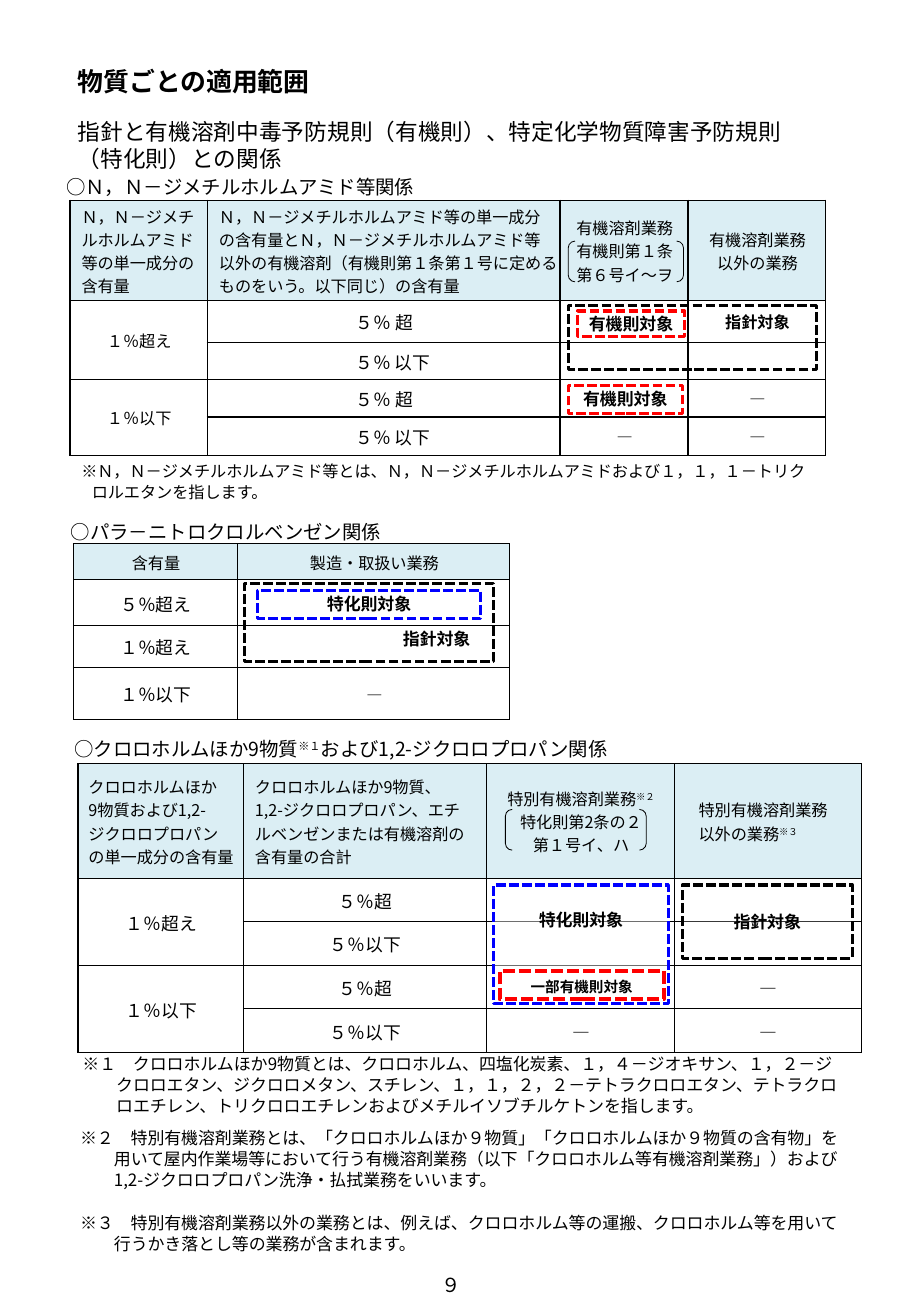
from dataclasses import dataclass

from lxml.etree import SubElement
from pptx import Presentation
from pptx.dml.color import RGBColor
from pptx.enum.dml import MSO_LINE_DASH_STYLE as Dash
from pptx.enum.shapes import MSO_SHAPE as Preset
from pptx.enum.text import MSO_ANCHOR as Anchor, PP_ALIGN as Align
from pptx.oxml.ns import qn
from pptx.util import Inches, Pt


@dataclass(frozen=True)
class Theme:
    black: str = "000000"
    white: str = "FFFFFF"
    header: str = "DBEEF4"
    red: str = "FF0000"
    blue: str = "0000FF"
    font: str = "Noto Sans CJK JP"
    label_font: str = "Calibri"
    number_font: str = "Arial"
    title: float = 16
    subtitle: float = 14
    heading: float = 12
    note: float = 10.5
    label: float = 10.5
    small_label: float = 9
    body: float = 11
    small: float = 10


theme = Theme()


def write(frame, text, size=theme.small, font=theme.font, bold=False, align=Align.LEFT,
          anchor=Anchor.TOP, spacing=None, before=0, left=0, first=0):
    """Each line is a paragraph, \v breaks a line, ^ encloses a superscript."""
    frame.vertical_anchor = anchor
    for number, line in enumerate(text.split("\n")):
        paragraph = frame.add_paragraph() if number else frame.paragraphs[0]
        paragraph.alignment = align
        if spacing:
            paragraph.line_spacing = Pt(spacing)
        if number:
            paragraph.space_before = Pt(before)
        properties = paragraph._p.get_or_add_pPr()
        properties.set("marL", str(Inches(left)))
        properties.set("indent", str(Inches(first)))
        if not line:
            paragraph._p.get_or_add_endParaRPr().set("sz", str(int(size * 100)))
            continue
        for row, segment in enumerate(line.split("\v")):
            if row:
                paragraph.add_line_break()
            for part, words in enumerate(segment.split("^")):
                if not words:
                    continue
                run = paragraph.add_run()
                run.text = words
                run.font.size = Pt(size)
                run.font.name = font
                run.font.bold = bold
                run.font.color.rgb = RGBColor.from_string(theme.black)
                SubElement(run.font._element, qn("a:ea"), typeface=theme.font)
                if part % 2:
                    run.font._element.set("baseline", "30000")


def set_borders(cell, width):
    properties = cell._tc.get_or_add_tcPr()
    for position, side in enumerate(("a:lnL", "a:lnR", "a:lnT", "a:lnB")):
        line = SubElement(properties, qn(side), w=str(Pt(width)))
        fill = SubElement(line, qn("a:solidFill"))
        SubElement(fill, qn("a:srgbClr"), val=theme.black)
        properties.remove(line)
        properties.insert(position, line)


presentation = Presentation()
presentation.slide_width = Inches(63 / 8)
presentation.slide_height = Inches(11.3)
slide = presentation.slides.add_slide(presentation.slide_layouts[6])

# Titles, section headings, notes and page number
heading = dict(size=theme.heading, spacing=14.2)
note = dict(size=theme.note, spacing=13, before=13, left=0.29, first=-0.29)
texts = [
    ((0.57, 0.52, 2.73, 0.37), True, "物質ごとの適用範囲",
     dict(size=theme.title, bold=True, spacing=19)),
    ((0.48, 0.96, 6.89, 0.59), True,
     "指針と有機溶剤中毒予防規則（有機則）、特定化学物質障害予防規則\n（特化則）との関係",
     dict(size=theme.subtitle, spacing=16.8, left=0.09)),
    ((0.47, 1.46, 3.23, 0.31), False, "○Ｎ，Ｎ－ジメチルホルムアミド等関係", heading),
    ((0.51, 4.42, 2.89, 0.3), False, "○パラ－ニトロクロルベンゼン関係", heading),
    ((0.54, 6.28, 6.01, 0.3), True,
     "○クロロホルムほか9物質^※１^および1,2-ジクロロプロパン関係", heading),
    ((0.6, 3.9, 6.53, 0.44), True,
     "※Ｎ，Ｎ－ジメチルホルムアミド等とは、Ｎ，Ｎ－ジメチルホルムアミドおよび"
     "１，１，１－トリクロルエタンを指します。",
     dict(spacing=13, left=0.09, first=-0.09)),
    ((0.61, 8.99, 7.04, 0.65), True,
     "※１　クロロホルムほか9物質とは、クロロホルム、四塩化炭素、１，４－ジオキサン、１，２－ジ\v"
     "クロロエタン、ジクロロメタン、スチレン、１，１，２，２－テトラクロロエタン、テトラクロ\v"
     "ロエチレン、トリクロロエチレンおよびメチルイソブチルケトンを指します。", note),
    ((0.59, 9.63, 6.9, 1.19), True,
     "※２　特別有機溶剤業務とは、「クロロホルムほか９物質」「クロロホルムほか９物質の含有物」を\v"
     "用いて屋内作業場等において行う有機溶剤業務（以下「クロロホルム等有機溶剤業務」）および\v"
     "1,2-ジクロロプロパン洗浄・払拭業務をいいます。\n"
     "※３　特別有機溶剤業務以外の業務とは、例えば、クロロホルム等の運搬、クロロホルム等を用いて\v"
     "行うかき落とし等の業務が含まれます。", note),
    ((3.69, 10.88, 0.33, 0.32), False, "９", dict(size=theme.heading, font=theme.number_font)),
]
for place, wrap, text, style in texts:
    box = slide.shapes.add_textbox(*map(Inches, place))
    box.text_frame.word_wrap = wrap
    write(box.text_frame, text, **style)

# Tables: None continues the cell above; header indents above zero align left
tables = [
    dict(at=(0.6, 1.72), columns=(1.18, 3.03, 1.1, 1.18), heights=(0.86, 0.36, 0.32, 0.32, 0.33),
         border=1, label=theme.small, dash=theme.small, indents=(0.09, 0.09, 0, 0), lower_shift=0.15,
         rows=[("Ｎ，Ｎ－ジメチルホルムアミド等の単一成分の含有量",
                "Ｎ，Ｎ－ジメチルホルムアミド等の単一成分\nの含有量とＮ，Ｎ－ジメチルホルムアミド等\n"
                "以外の有機溶剤（有機則第１条第１号に定めるものをいう。以下同じ）の含有量",
                "有機溶剤業務\n有機則第１条\n第６号イ～ヲ", "有機溶剤業務\n以外の業務"),
               ("１％超え", "５％ 超", "", "指針対象"),
               (None, "５％ 以下", "", ""),
               ("１％以下", "５％ 超", "", "―"),
               (None, "５％ 以下", "―", "―")]),
    dict(at=(0.63, 4.67), columns=(1.41, 2.34), heights=(0.31, 0.39, 0.36, 0.45),
         border=0.75, label=theme.body, dash=theme.small, indents=(0, 0), lower_shift=0,
         rows=[("含有量", "製造・取扱い業務"), ("５％超え", ""), ("１％超え", ""), ("１％以下", "―")]),
    dict(at=(0.67, 6.56), columns=(1.42, 2.09, 1.61, 1.61), heights=(0.98,) + (0.37, 0.38) * 2,
         border=0.75, label=theme.body, dash=theme.body, indents=(0.08, 0.09, 0, 0.2), lower_shift=0,
         rows=[("クロロホルムほか\n9物質および1,2-\nジクロロプロパン\nの単一成分の含有量",
                "クロロホルムほか9物質、\n1,2-ジクロロプロパン、エチ\nルベンゼンまたは有機溶剤の\n含有量の合計",
                "特別有機溶剤業務^※２^\n特化則第2条の２\n第１号イ、ハ",
                "特別有機溶剤業務\n以外の業務^※３^"),
               ("１％超え", "５％超", "", ""),
               (None, "５％以下", "", ""),
               ("１％以下", "５％超", "", "―"),
               (None, "５％以下", "―", "―")]),
]
for data in tables:
    columns, heights = data["columns"], data["heights"]
    size = (sum(columns), sum(heights))
    table = slide.shapes.add_table(len(heights), len(columns),
                                   *map(Inches, data["at"] + size)).table
    table.first_row = table.horz_banding = False
    for column, width in zip(table.columns, columns):
        column.width = Inches(width)
    for r, (height, texts_in_row) in enumerate(zip(heights, data["rows"])):
        table.rows[r].height = Inches(height)
        for c, text in enumerate(texts_in_row):
            cell = table.cell(r, c)
            cell.margin_left = cell.margin_top = Inches(0.01)
            cell.margin_right = cell.margin_bottom = 0
            cell.fill.solid()
            cell.fill.fore_color.rgb = RGBColor.from_string(theme.white if r else theme.header)
            set_borders(cell, data["border"])
            if text is None:
                write(cell.text_frame, "")
                table.cell(r - 1, c).merge(cell)
                continue
            indent = 0 if r else data["indents"][c]
            if c == 1 and text.endswith("以下"):
                indent = data["lower_shift"]
            text_size = theme.small
            if r and "％" in text:
                text_size = theme.body if c else data["label"]
            elif text == "―":
                text_size = data["dash"]
            write(cell.text_frame, text, size=text_size, bold=text == "指針対象", left=indent,
                  align=Align.CENTER if r or not indent else Align.LEFT)
            cell.vertical_anchor = Anchor.MIDDLE

# Dashed scope frames: place, colour, line width, opacity, text, insets, text format
middle = dict(anchor=Anchor.MIDDLE, spacing=12)
tight, wide = (0.04,) * 4, (0.1, 0.05, 0.1, 0.05)
frames = [
    ((4.88, 3.31, 0.98, 0.24), theme.red, 2, 0, "有機則対象", tight, middle),
    ((4.88, 2.62, 2.13, 0.55), theme.black, 2, 0, "", tight, middle),
    ((4.96, 2.67, 0.92, 0.22), theme.red, 2, 0, "有機則対象", tight, middle),
    ((2.1, 5.01, 2.14, 0.67), theme.black, 2, 0, "指針対象", (0.1, 0.05, 0.2, 0.11),
     dict(anchor=Anchor.BOTTOM, align=Align.RIGHT, spacing=12)),
    ((2.21, 5.07, 1.92, 0.24), theme.blue, 2, 0, "特化則対象", wide, middle),
    ((4.24, 7.6, 1.5, 1.02), theme.blue, 2, 43, "特化則対象", (0.1, 0.22, 0.1, 0.05),
     dict(spacing=12)),
    ((5.86, 7.6, 1.46, 0.63), theme.black, 2, 22, "指針対象", wide, dict(anchor=Anchor.MIDDLE)),
    ((4.29, 8.34, 1.41, 0.24), theme.red, 2.5, 0, "一部有機則対象", wide,
     dict(middle, size=theme.small_label)),
]
for place, color, width, opacity, text, insets, style in frames:
    shape = slide.shapes.add_shape(Preset.RECTANGLE, *map(Inches, place))
    shape.shadow.inherit = False
    shape.line.color.rgb = RGBColor.from_string(color)
    shape.line.width = Pt(width)
    shape.line.dash_style = Dash.SQUARE_DOT
    if opacity:
        shape.fill.solid()
        shape.fill.fore_color.rgb = RGBColor.from_string(theme.white)
        tint = shape._element.spPr.find(qn("a:solidFill"))[0]
        SubElement(tint, qn("a:alpha"), val=str(opacity * 1000))
    else:
        shape.fill.background()
    frame = shape.text_frame
    frame.word_wrap = True
    frame.margin_left, frame.margin_top, frame.margin_right, frame.margin_bottom = map(Inches, insets)
    write(frame, text, **{"size": theme.label, "font": theme.label_font, "bold": True,
                          "align": Align.CENTER, **style})

# Brackets around the cited articles
for place in ((4.88, 2.07, 0.99, 0.35), (4.34, 6.95, 1.21, 0.35)):
    bracket = slide.shapes.add_shape(Preset.DOUBLE_BRACKET, *map(Inches, place))
    bracket.shadow.inherit = False
    bracket.fill.background()
    bracket.line.color.rgb = RGBColor.from_string(theme.black)
    bracket.line.width = Pt(0.5)

presentation.save("out.pptx")
